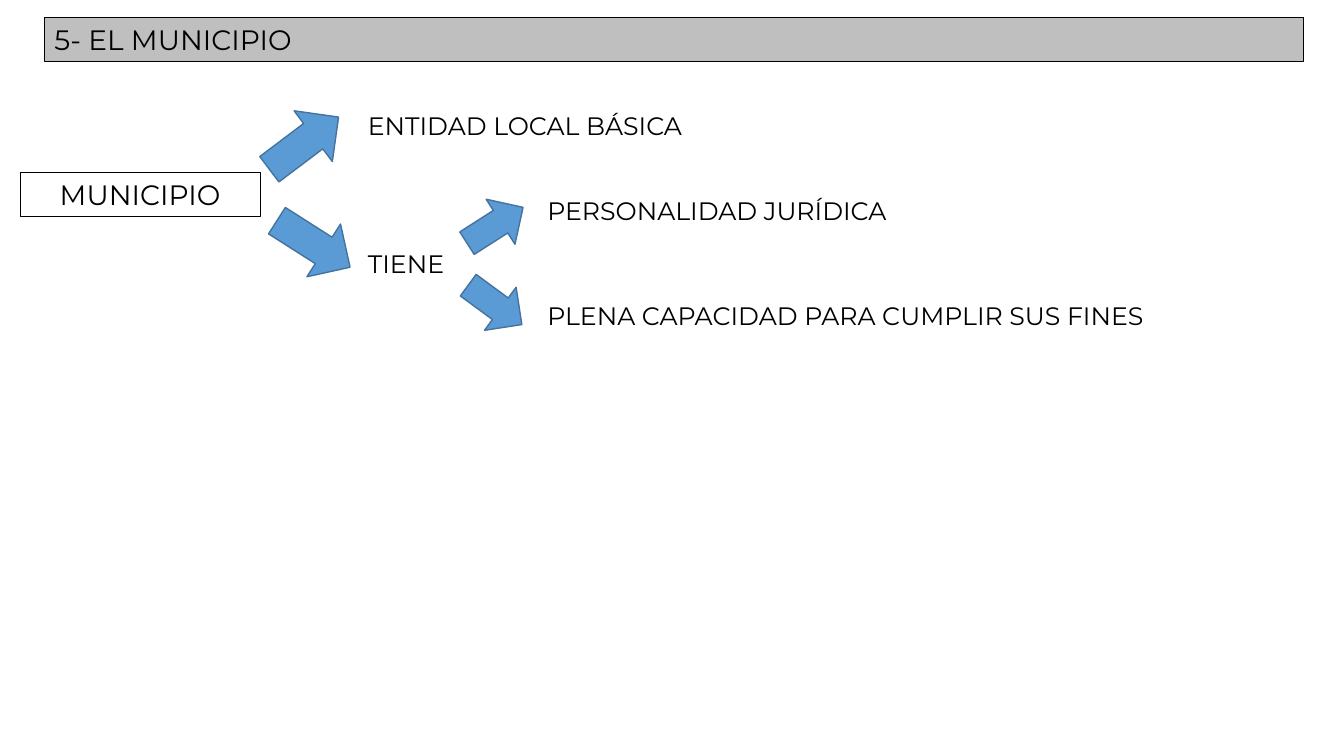
import pptx
import pptx.dml.color
import pptx.enum.shapes
import pptx.enum.text
import pptx.util

Inches = pptx.util.Inches
Shape = pptx.enum.shapes.MSO_SHAPE
Align = pptx.enum.text.PP_ALIGN


def color(hex_code):
    return pptx.dml.color.RGBColor.from_string(hex_code)


def write(shape, text, size=18, align=Align.LEFT, fill=None, outline=None):
    frame = shape.text_frame
    frame.word_wrap = True
    frame.auto_size = pptx.enum.text.MSO_AUTO_SIZE.NONE
    frame.vertical_anchor = pptx.enum.text.MSO_ANCHOR.TOP
    paragraph = frame.paragraphs[0]
    paragraph.alignment = align
    run = paragraph.add_run()
    run.text = text
    run.font.name = "Montserrat"
    run.font.size = pptx.util.Pt(size)
    run.font.color.rgb = color("000000")
    if fill:
        shape.fill.solid()
        shape.fill.fore_color.rgb = color(fill)
    if outline:
        shape.line.color.rgb = color(outline)
        shape.line.width = pptx.util.Pt(0.75)


deck = pptx.Presentation()
deck.slide_width = Inches(13.33)
deck.slide_height = Inches(7.5)
slide = deck.slides.add_slide(deck.slide_layouts[5])

# Heading bar
heading = slide.shapes.title
heading.left, heading.top = Inches(0.44), Inches(0.17)
heading.width, heading.height = Inches(12.49), Inches(0.44)
write(heading, "5- EL MUNICIPIO", size=20, fill="BFBFBF", outline="000000")

# Root of the diagram
municipio = slide.shapes.add_textbox(
    Inches(0.2), Inches(1.71), Inches(2.38), Inches(0.44))
write(municipio, "MUNICIPIO", size=20, align=Align.CENTER, outline="000000")

# Branch labels
branches = [
    ("ENTIDAD LOCAL BÁSICA", 3.55, 1.05, 3.78),
    ("TIENE", 3.55, 2.41, 2.31),
    ("PERSONALIDAD JURÍDICA", 5.33, 1.89, 4.47),
    ("PLENA CAPACIDAD PARA CUMPLIR SUS FINES", 5.33, 2.93, 6.74),
]
for text, left, top, width in branches:
    branch = slide.shapes.add_textbox(
        Inches(left), Inches(top), Inches(width), Inches(0.4))
    write(branch, text)

# Arrows from each node to its branches
arrows = [
    (Shape.DOWN_ARROW, 2.7, 0.99, 0.63, 0.86, 233),
    (Shape.DOWN_ARROW, 2.8, 1.99, 0.62, 0.86, 302.5),
    (Shape.RIGHT_ARROW, 4.58, 1.97, 0.66, 0.53, 327.4),
    (Shape.RIGHT_ARROW, 4.58, 2.76, 0.66, 0.53, 36.3),
]
for direction, left, top, width, height, angle in arrows:
    arrow = slide.shapes.add_shape(
        direction, Inches(left), Inches(top), Inches(width), Inches(height))
    arrow.rotation = angle
    arrow.shadow.inherit = False
    arrow.fill.solid()
    arrow.fill.fore_color.rgb = color("5B9BD5")
    arrow.line.color.rgb = color("43739E")
    arrow.line.width = pptx.util.Pt(1)

deck.save("out.pptx")
